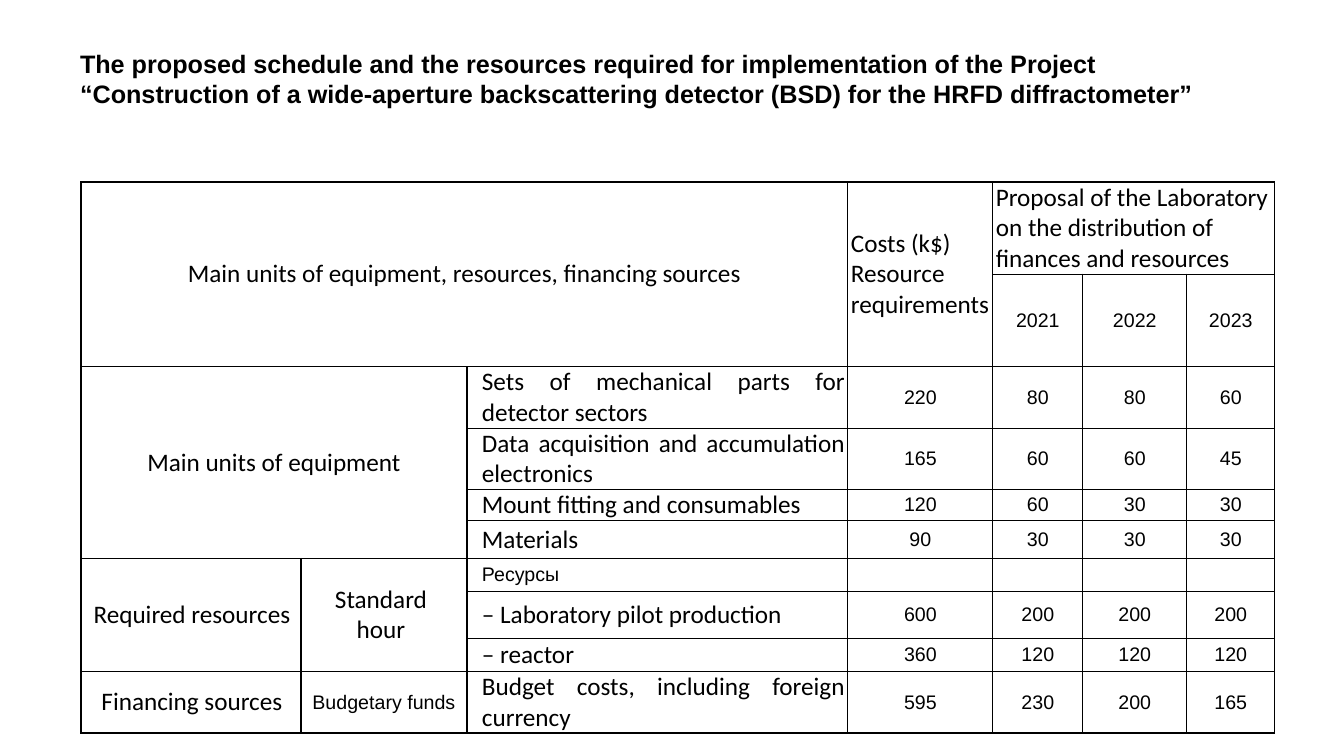
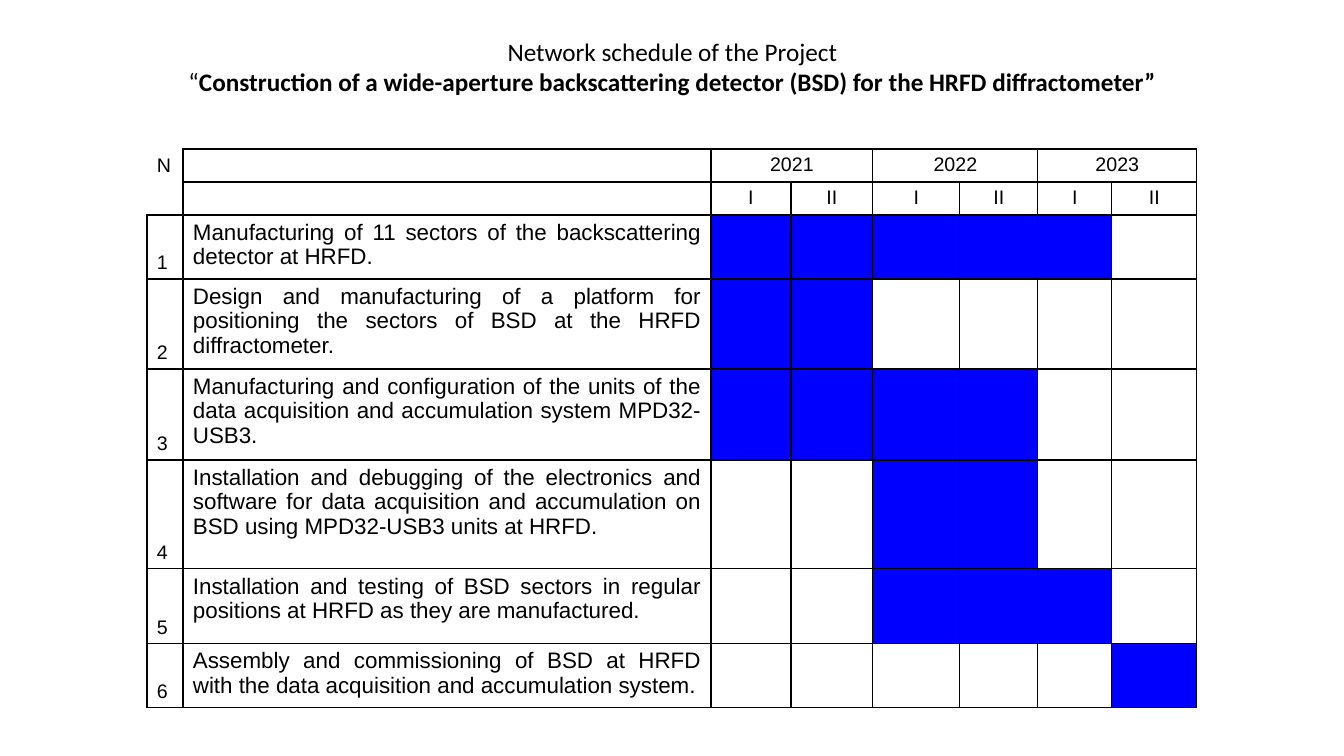
"""Build the resources table and the network schedule of the BSD project."""
from dataclasses import dataclass

from lxml import etree
from pptx import Presentation
from pptx.dml.color import RGBColor
from pptx.enum.text import MSO_ANCHOR, PP_ALIGN
from pptx.oxml.ns import qn
from pptx.util import Pt

BLACK = RGBColor(0, 0, 0)
BLUE = RGBColor(0, 0, 255)
LEFT, CENTER, JUSTIFY = PP_ALIGN.LEFT, PP_ALIGN.CENTER, PP_ALIGN.JUSTIFY
TOP, MIDDLE, BOTTOM = MSO_ANCHOR.TOP, MSO_ANCHOR.MIDDLE, MSO_ANCHOR.BOTTOM
EMU_PER_PX = 12192000 / 1344
TITLE_ONLY = 5
SIDES = "LRTB"
PROJECT = "“Construction of a wide-aperture backscattering detector (BSD) for the HRFD diffractometer”"


@dataclass(frozen=True)
class Span:
    text: str
    bold: bool = False


@dataclass(frozen=True)
class Style:
    font: str
    size: int
    align: PP_ALIGN = CENTER
    anchor: MSO_ANCHOR = MIDDLE
    left: int = 3
    right: int = 3
    vertical: int = 0


@dataclass(frozen=True)
class Entry:
    row: int
    col: int
    text: str
    style: Style
    rows: int = 1
    cols: int = 1


@dataclass(frozen=True)
class Grid:
    left: int
    top: int
    widths: list[int]
    heights: list[int]


@dataclass(frozen=True)
class Resource:
    text: str
    style: Style
    values: tuple[str, ...] = ()


@dataclass(frozen=True)
class Task:
    text: str
    first: int
    last: int


HEADING = Style("Calibri", 18)
COST_HEADING = Style("Calibri", 18, LEFT, right=0)
PROPOSAL = Style("Calibri", 18, LEFT)
GROUP = Style("Calibri", 18, left=10, right=8)
UNIT = Style("Calibri", 18, left=8, right=14)
ITEM = Style("Calibri", 18, JUSTIFY, left=15)
SMALL_ITEM = Style("Arial", 14, JUSTIFY, left=15)
NUMBER = Style("Arial", 14)
PERIOD = Style("Arial", 14, CENTER, TOP, 10, 10, 5)
TASK_NUMBER = Style("Arial", 14, JUSTIFY, BOTTOM, 10, 10, 5)
TASK_TEXT = Style("Arial", 16, JUSTIFY, TOP, 10, 10, 5)

YEARS = ("2021", "2022", "2023")
RESOURCE_GRID = Grid(81, 182, [220, 166, 381, 145, 90, 104, 88],
                     [91, 91, 60, 61, 30, 38, 33, 47, 33, 60])
SCHEDULE_GRID = Grid(147, 149, [36, 528, 80, 82, 87, 78, 74, 85],
                     [33, 33, 64, 90, 91, 109, 75, 64])

RESOURCE_HEADINGS = [
    Entry(0, 0, "Main units of equipment, resources, financing sources", HEADING, 2, 3),
    Entry(0, 3, "Costs (k$)\nResource requirements", COST_HEADING, 2),
    Entry(0, 4, "Proposal of the Laboratory on the distribution of finances and resources",
          PROPOSAL, 1, 3),
    Entry(2, 0, "Main units of equipment", HEADING, 4, 2),
    Entry(6, 0, "Required resources", GROUP, 3),
    Entry(6, 1, "Standard hour", UNIT, 3),
    Entry(9, 0, "Financing sources", GROUP),
    Entry(9, 1, "Budgetary funds", NUMBER),
]
RESOURCES = [
    Resource("Sets of mechanical parts for detector sectors", ITEM, ("220", "80", "80", "60")),
    Resource("Data acquisition and accumulation electronics", ITEM, ("165", "60", "60", "45")),
    Resource("Mount fitting and consumables", ITEM, ("120", "60", "30", "30")),
    Resource("Materials", ITEM, ("90", "30", "30", "30")),
    Resource("Ресурсы", SMALL_ITEM),
    Resource("– Laboratory pilot production", ITEM, ("600", "200", "200", "200")),
    Resource("– reactor", ITEM, ("360", "120", "120", "120")),
    Resource("Budget costs, including foreign currency", ITEM, ("595", "230", "200", "165")),
]
TASKS = [
    Task("Manufacturing of 11 sectors of the backscattering detector at HRFD.", 0, 4),
    Task("Design and manufacturing of a platform for positioning the sectors of BSD "
         "at the HRFD diffractometer.", 0, 1),
    Task("Manufacturing and configuration of the units of the data acquisition and "
         "accumulation system MPD32-USB3.", 0, 3),
    Task("Installation and debugging of the electronics and software for data acquisition "
         "and accumulation on BSD using MPD32-USB3 units at HRFD.", 2, 3),
    Task("Installation and testing of BSD sectors in regular positions at HRFD as they "
         "are manufactured.", 2, 4),
    Task("Assembly and commissioning of BSD at HRFD with the data acquisition and "
         "accumulation system.", 5, 5),
]


def px(length: int) -> int:
    """Turn pixels into EMU."""
    return round(length * EMU_PER_PX)


def add_span(para, span: Span, style: Style) -> None:
    """Add one formatted run to a paragraph."""
    run = para.add_run()
    run.text = span.text
    run.font.name = style.font
    run.font.size = Pt(style.size)
    run.font.bold = span.bold
    run.font.color.rgb = BLACK


def write(frame, lines: list[list[Span]], style: Style) -> None:
    """Write paragraphs of spans into a text frame."""
    for index, spans in enumerate(lines):
        para = frame.add_paragraph() if index else frame.paragraphs[0]
        para.alignment = style.align
        for span in spans:
            add_span(para, span, style)


def add_page(deck, box: tuple[int, int, int, int], lines: list[list[Span]], style: Style):
    """Add a page with its title placed and written."""
    page = deck.slides.add_slide(deck.slide_layouts[TITLE_ONLY])
    title = page.shapes.title
    title.left, title.top, title.width, title.height = map(px, box)
    frame = title.text_frame
    frame.word_wrap = True
    frame.vertical_anchor = style.anchor
    frame.margin_left = frame.margin_right = px(style.left)
    frame.margin_top = frame.margin_bottom = px(style.vertical)
    write(frame, lines, style)
    return page


def set_borders(cell, sides: str) -> None:
    """Draw black lines on the given sides and none on the others."""
    props = cell._tc.get_or_add_tcPr()
    for side in SIDES:
        line = etree.SubElement(props, qn(f"a:ln{side}"), w=str(Pt(1)))
        if side in sides:
            fill = etree.SubElement(line, qn("a:solidFill"))
            etree.SubElement(fill, qn("a:srgbClr"), val=str(BLACK))
        else:
            etree.SubElement(line, qn("a:noFill"))


def add_grid(page, grid: Grid, entries: list[Entry], open_cells: dict[tuple[int, int], str]):
    """Add a ruled table without fills and write its entries."""
    table = page.shapes.add_table(
        len(grid.heights), len(grid.widths), px(grid.left), px(grid.top),
        px(sum(grid.widths)), px(sum(grid.heights))).table
    table.first_row = table.horz_banding = False
    for column, width in zip(table.columns, grid.widths):
        column.width = px(width)
    for row, height in zip(table.rows, grid.heights):
        row.height = px(height)
    for row in range(len(grid.heights)):
        for col in range(len(grid.widths)):
            cell = table.cell(row, col)
            set_borders(cell, open_cells.get((row, col), SIDES))
            cell.fill.background()
            cell.margin_top = cell.margin_bottom = 0
    for entry in entries:
        cell, style = table.cell(entry.row, entry.col), entry.style
        if entry.rows * entry.cols > 1:
            cell.merge(table.cell(entry.row + entry.rows - 1, entry.col + entry.cols - 1))
        cell.vertical_anchor = style.anchor
        cell.margin_left, cell.margin_right = px(style.left), px(style.right)
        cell.margin_top = cell.margin_bottom = px(style.vertical)
        write(cell.text_frame, [[Span(line)] for line in entry.text.split("\n")], style)
    return table


def build_resources(deck) -> None:
    """Build the page of costs and resources."""
    page = add_page(
        deck, (70, 43, 1180, 72),
        [[Span("The proposed schedule and the resources required for implementation "
               f"of the Project {PROJECT}", True)]],
        Style("Arial", 18, LEFT, TOP, 10, 10, 5))
    entries = RESOURCE_HEADINGS + [
        Entry(1, col, year, NUMBER) for col, year in enumerate(YEARS, 4)]
    for row, resource in enumerate(RESOURCES, 2):
        entries.append(Entry(row, 2, resource.text, resource.style))
        entries += [Entry(row, col, value, NUMBER)
                    for col, value in enumerate(resource.values, 3)]
    add_grid(page, RESOURCE_GRID, entries, {})


def build_schedule(deck) -> None:
    """Build the page of the half-year schedule."""
    page = add_page(
        deck, (88, 31, 1169, 72),
        [[Span("Network schedule of the Project")],
         [Span(PROJECT[0]), Span(PROJECT[1:], True)]],
        Style("Calibri", 18, CENTER, TOP, 10, 10, 5))
    entries = [Entry(0, 0, "N", TASK_NUMBER)]
    for index, year in enumerate(YEARS):
        col = 2 + 2 * index
        entries += [Entry(0, col, year, PERIOD, 1, 2),
                    Entry(1, col, "I", PERIOD), Entry(1, col + 1, "II", PERIOD)]
    for number, task in enumerate(TASKS, 1):
        entries += [Entry(number + 1, 0, str(number), TASK_NUMBER),
                    Entry(number + 1, 1, task.text, TASK_TEXT)]
    table = add_grid(page, SCHEDULE_GRID, entries, {(0, 0): "R", (1, 0): "RB"})
    for row, task in enumerate(TASKS, 2):
        for half in range(task.first, task.last + 1):
            fill = table.cell(row, 2 + half).fill
            fill.solid()
            fill.fore_color.rgb = BLUE


def main() -> None:
    """Build and save the deck."""
    deck = Presentation()
    deck.slide_width, deck.slide_height = px(1344), px(756)
    build_resources(deck)
    build_schedule(deck)
    deck.save("out.pptx")


if __name__ == "__main__":
    main()
